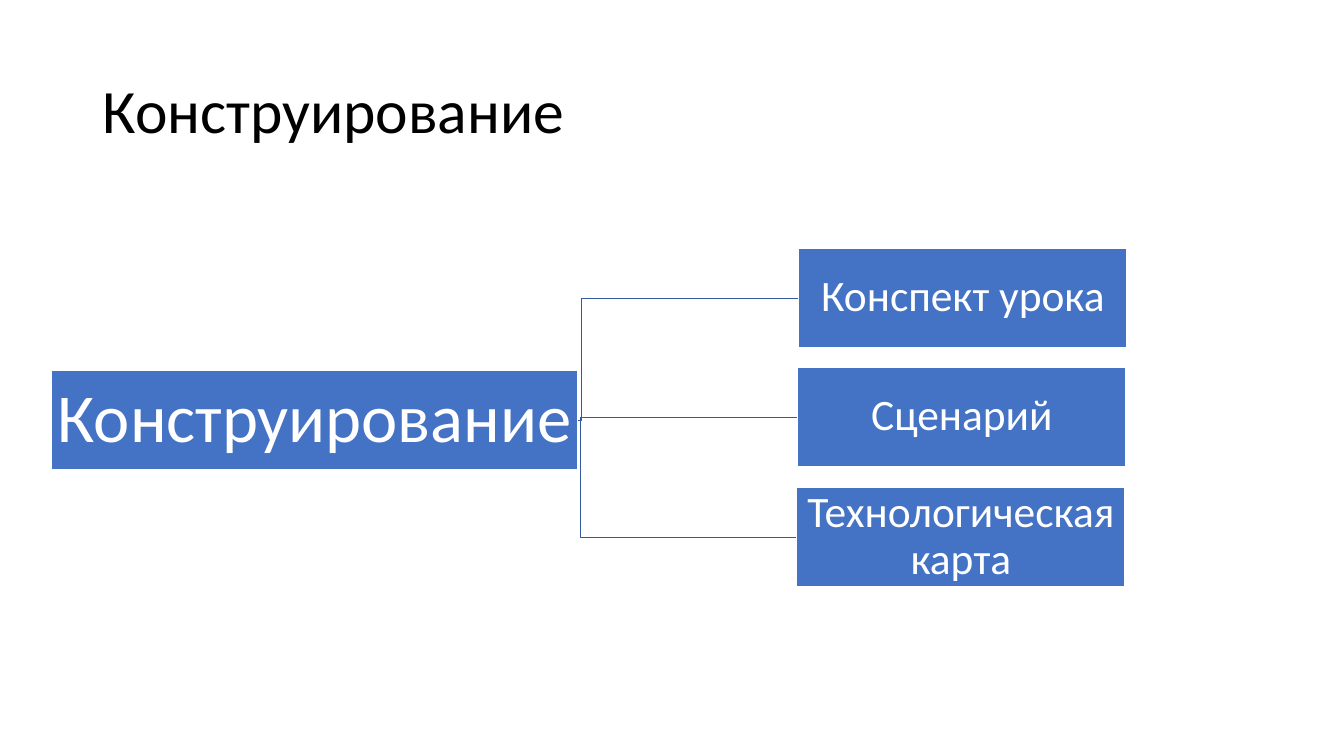
import pptx
import pptx.util
import pptx.dml.color
import pptx.enum.shapes
import pptx.enum.text

PX = 9144  # 100 px to the inch
THEME = {
    "font": "Calibri",
    "title": "000000", "box": "4472C4", "on_box": "FFFFFF", "branch": "365B9D",
    "title_size": 44, "root_size": 49, "leaf_size": 31, "line": 1,
}


def rgb(name):
    return pptx.dml.color.RGBColor.from_string(THEME[name])


def write(shape, text, *, size, color, align, margins):
    frame = shape.text_frame
    frame.word_wrap = True
    frame.vertical_anchor = pptx.enum.text.MSO_ANCHOR.MIDDLE
    frame.margin_left = frame.margin_right = margins[0] * PX
    frame.margin_top = frame.margin_bottom = margins[1] * PX
    paragraph = frame.paragraphs[0]
    paragraph.alignment = align
    paragraph.line_spacing = 0.9
    run = paragraph.add_run()
    run.text = text
    run.font.name = THEME["font"]
    run.font.size = pptx.util.Pt(THEME[size])
    run.font.color.rgb = rgb(color)


deck = pptx.Presentation()
deck.slide_width, deck.slide_height = 1333 * PX, 750 * PX
slide = deck.slides.add_slide(deck.slide_layouts[6])
ALIGN = pptx.enum.text.PP_ALIGN

# Title
title = slide.shapes.add_textbox(92 * PX, 40 * PX, 1150 * PX, 145 * PX)
write(title, "Конструирование", size="title_size", color="title",
      align=ALIGN.LEFT, margins=(10, 5))

# Tree: text, left, top, width, type size, margin
BOX_HEIGHT = 99
ROOT = ("Конструирование", 51, 367, 522, "root_size", 3)
LEAVES = [
    ("Конспект урока", 792, 246, 326, "leaf_size", 2),
    ("Сценарий", 791, 364, 326, "leaf_size", 2),
    ("Технологическая карта", 790, 483, 326, "leaf_size", 2),
]

# Branches start behind the root box and turn halfway to each leaf
START_X, START_Y = 362, 417
for _, leaf_left, leaf_top, *_ in reversed(LEAVES):
    turn_x = (START_X + leaf_left) // 2
    leaf_y = leaf_top + BOX_HEIGHT // 2 + 1
    outline = slide.shapes.build_freeform(START_X, START_Y, scale=PX)
    outline.add_line_segments(
        [(turn_x, START_Y), (turn_x, leaf_y), (leaf_left, leaf_y)], close=False)
    branch = outline.convert_to_shape()
    branch.shadow.inherit = False
    branch.fill.background()
    branch.line.color.rgb = rgb("branch")
    branch.line.width = pptx.util.Pt(THEME["line"])

# Boxes
for text, left, top, width, size, margin in [ROOT, *LEAVES]:
    box = slide.shapes.add_shape(
        pptx.enum.shapes.MSO_SHAPE.RECTANGLE,
        left * PX, top * PX, width * PX, BOX_HEIGHT * PX)
    box.shadow.inherit = False
    box.fill.solid()
    box.fill.fore_color.rgb = rgb("box")
    box.line.color.rgb = rgb("on_box")
    box.line.width = pptx.util.Pt(THEME["line"])
    write(box, text, size=size, color="on_box",
          align=ALIGN.CENTER, margins=(margin, margin))

deck.save("out.pptx")
